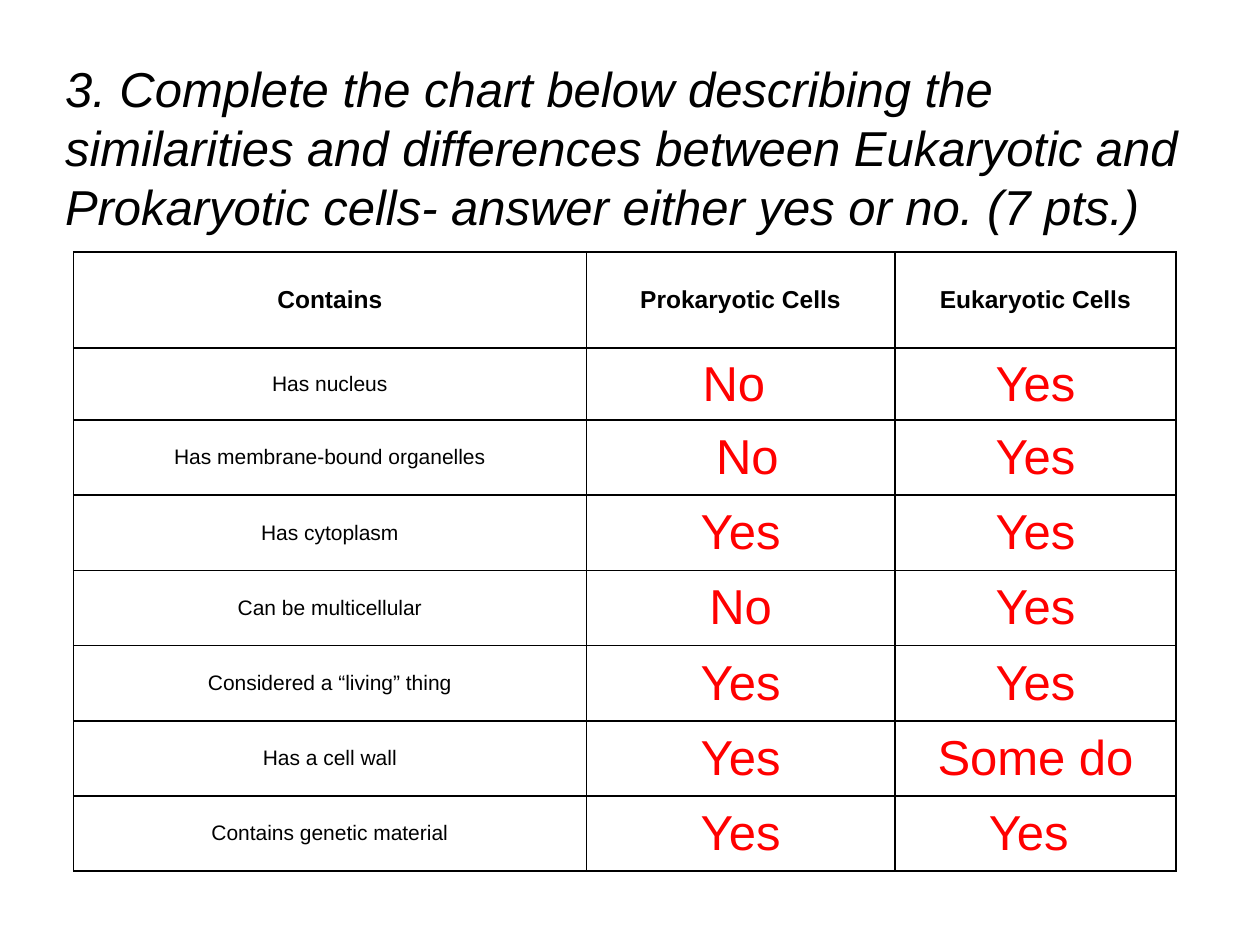
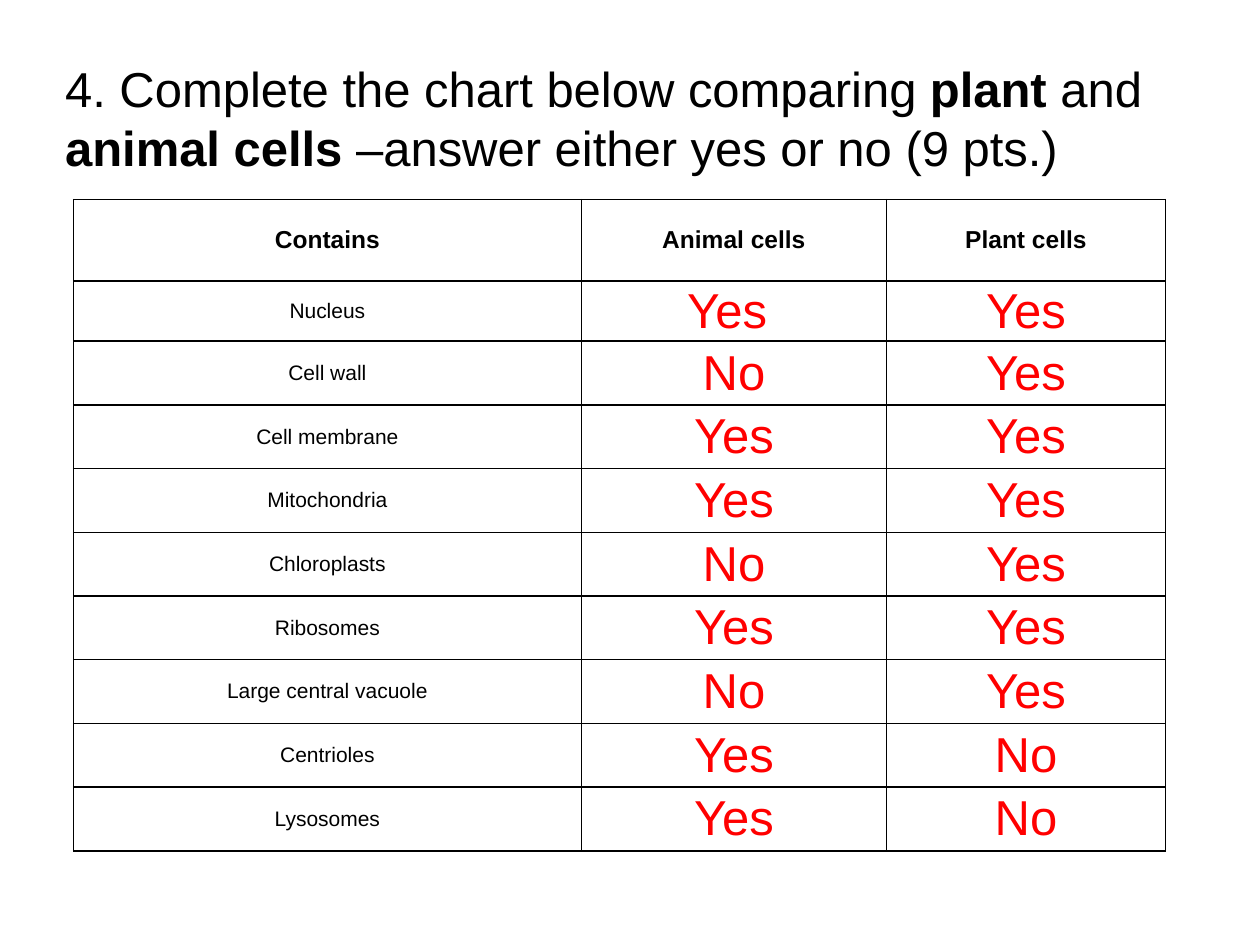
from lxml.etree import SubElement
from pptx import Presentation
from pptx.dml.color import RGBColor
from pptx.enum.text import MSO_ANCHOR, MSO_AUTO_SIZE, PP_ALIGN
from pptx.oxml.ns import qn
from pptx.util import Pt


class Deck:
    """Style of the worksheet and the slide being built."""

    COLORS = {"text": "000000", "answer": "FF0000", "border": "000000"}
    FONT = "Arial"
    LARGE, HEADER, LABEL = 28, 14, 12

    def __init__(self):
        self.prs = Presentation()
        self.prs.slide_width, self.prs.slide_height = Pt(720), Pt(540)
        self.s = None

    def add_slide(self):
        self.s = self.prs.slides.add_slide(self.prs.slide_layouts[5])

    def add_run(self, p, text, size, color="text", bold=False, italic=False):
        r = p.add_run()
        r.text = text
        font = r.font
        font.name, font.size = self.FONT, Pt(size)
        font.bold, font.italic = bold, italic
        font.color.rgb = RGBColor.from_string(self.COLORS[color])

    def add_title(self, runs, height, italic=False):
        sp = self.s.shapes.title
        sp.left, sp.top, sp.width, sp.height = Pt(30), Pt(30), Pt(660), Pt(height)
        tf = sp.text_frame
        tf.word_wrap = True
        tf.auto_size = MSO_AUTO_SIZE.NONE
        tf.vertical_anchor = MSO_ANCHOR.TOP
        p = tf.paragraphs[0]
        p.alignment = PP_ALIGN.LEFT
        for text, bold in runs:
            self.add_run(p, text, self.LARGE, bold=bold, italic=italic)

    def add_borders(self, cell):
        tc_pr = cell._tc.get_or_add_tcPr()
        for side in ("lnL", "lnR", "lnT", "lnB"):
            ln = SubElement(tc_pr, qn(f"a:{side}"), w=str(Pt(1)))
            fill = SubElement(ln, qn("a:solidFill"))
            SubElement(fill, qn("a:srgbClr"), val=self.COLORS["border"])

    def add_cell(self, cell, text, size, color="text", bold=False):
        self.add_borders(cell)
        cell.fill.background()
        cell.margin_left = cell.margin_right = Pt(5)
        cell.margin_top = cell.margin_bottom = Pt(0)
        cell.vertical_anchor = MSO_ANCHOR.MIDDLE
        p = cell.text_frame.paragraphs[0]
        p.alignment = PP_ALIGN.CENTER
        self.add_run(p, text, size, color, bold)

    def add_answer_table(self, top, widths, heights, rows):
        header, first, other = heights
        row_heights = [header, first] + [other] * (len(rows) - 2)
        table = self.s.shapes.add_table(
            len(rows), len(widths), Pt(42), Pt(top),
            Pt(sum(widths)), Pt(sum(row_heights))).table
        table.horz_banding = False
        for column, width in zip(table.columns, widths):
            column.width = Pt(width)
        for i, (row, height) in enumerate(zip(rows, row_heights)):
            table.rows[i].height = Pt(height)
            for j, text in enumerate(row):
                cell = table.cell(i, j)
                if i == 0:
                    self.add_cell(cell, text, self.HEADER, bold=True)
                elif j == 0:
                    self.add_cell(cell, text, self.LABEL)
                else:
                    self.add_cell(cell, text, self.LARGE, "answer")

    def save(self):
        self.prs.save("out.pptx")


def main():
    deck = Deck()

    deck.add_slide()
    deck.add_title([
        ("3. Complete the chart below describing the similarities and "
         "differences between Eukaryotic and Prokaryotic cells- answer "
         "either yes or no. (7 pts.)", False),
    ], height=112, italic=True)
    deck.add_answer_table(144, (293, 176.4, 160.6), (55, 41, 43), [
        ("Contains", "Prokaryotic Cells", "Eukaryotic Cells"),
        ("Has nucleus", "No ", "Yes"),
        ("Has membrane-bound organelles", " No", "Yes"),
        ("Has cytoplasm", "Yes", "Yes"),
        ("Can be multicellular", "No", "Yes"),
        ("Considered a “living” thing", "Yes", "Yes"),
        ("Has a cell wall", "Yes", "Some do"),
        ("Contains genetic material", "Yes", "Yes "),
    ])

    deck.add_slide()
    deck.add_title([
        ("4. Complete the chart below comparing ", False),
        ("plant", True),
        (" and ", False),
        ("animal cells", True),
        (" –answer either yes or no (9 pts.)", False),
    ], height=80)
    deck.add_answer_table(114, (290.2, 174.4, 159.4), (46.5, 34.5, 36.4), [
        ("Contains", "Animal cells", "Plant cells"),
        ("Nucleus", "Yes ", "Yes"),
        ("Cell wall", "No", "Yes"),
        ("Cell membrane", "Yes", "Yes"),
        ("Mitochondria", "Yes", "Yes"),
        ("Chloroplasts", "No", "Yes"),
        ("Ribosomes", "Yes", "Yes"),
        ("Large central vacuole", "No", "Yes"),
        ("Centrioles", "Yes", "No"),
        ("Lysosomes", "Yes", "No"),
    ])

    deck.save()


if __name__ == "__main__":
    main()
